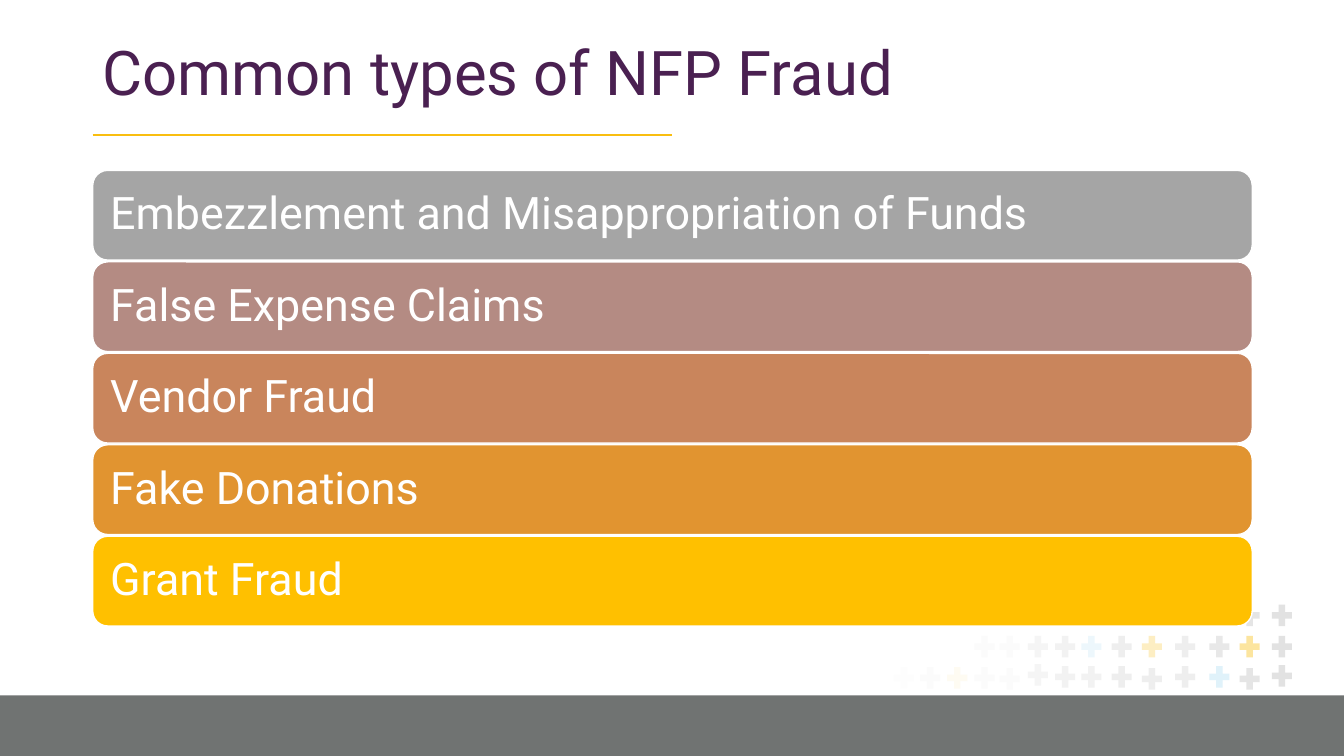
from dataclasses import dataclass

import pptx
import pptx.dml.color
import pptx.enum.shapes
import pptx.enum.text
import pptx.oxml.ns
import pptx.util
from lxml import etree

Inches = pptx.util.Inches
Pt = pptx.util.Pt
Shape = pptx.enum.shapes.MSO_SHAPE

FONT = "Roboto"
COLOURS = {
    "white": "FFFFFF", "purple": "4A2051", "gold": "F9BE10", "footer": "707372",
    "plus_grey": "BFBFBF", "plus_blue": "A7DAF1",
    "grey": "A5A5A5", "rose": "B48B83", "copper": "C9855C",
    "orange": "E19430", "amber": "FFC000",
}


@dataclass
class Bar:
    text: str
    colour: str


@dataclass
class PlusColumn:
    left: float
    opacity: int
    bottom_top: float


@dataclass
class PlusRow:
    first_column: int
    accents: dict[int, str]
    top: float | None = None


BARS = [
    Bar("Embezzlement and Misappropriation of Funds", "grey"),
    Bar("False Expense Claims", "rose"),
    Bar("Vendor Fraud", "copper"),
    Bar("Fake Donations", "orange"),
    Bar("Grant Fraud", "amber"),
]
BAR_TOP, BAR_PITCH = 1.69, (5.32 - 1.69) / (len(BARS) - 1)

PLUS_COLUMNS = [
    PlusColumn(8.83, 2, 6.58), PlusColumn(9.09, 5, 6.58),
    PlusColumn(9.36, 5, 6.58), PlusColumn(9.63, 5, 6.58),
    PlusColumn(9.88, 5, 6.59), PlusColumn(10.16, 15, 6.55),
    PlusColumn(10.43, 20, 6.57), PlusColumn(10.69, 20, 6.57),
    PlusColumn(10.99, 25, 6.57), PlusColumn(11.29, 25, 6.59),
    PlusColumn(11.62, 25, 6.57), PlusColumn(11.96, 35, 6.57),
    PlusColumn(12.26, 40, 6.59), PlusColumn(12.58, 45, 6.56),
]
# A row without a top follows the uneven bottom edge of its columns
PLUS_ROWS = [
    PlusRow(12, {}, 5.96),
    PlusRow(3, {7: "plus_blue", 9: "gold", 12: "gold"}, 6.27),
    PlusRow(0, {2: "gold", 11: "plus_blue"}),
]


def rgb(name: str) -> pptx.dml.color.RGBColor:
    return pptx.dml.color.RGBColor.from_string(COLOURS[name])


def add_box(page, kind, left: float, top: float, width: float, height: float,
            colour: str, outline: str | None = None, opacity: int = 100):
    box = page.shapes.add_shape(kind, Inches(left), Inches(top), Inches(width), Inches(height))
    box.shadow.inherit = False
    box.fill.solid()
    box.fill.fore_color.rgb = rgb(colour)
    if outline:
        box.line.color.rgb = rgb(outline)
        box.line.width = Pt(1)
    else:
        box.line.fill.background()
    if opacity < 100:
        fill_colour = box.fill._xPr.find(".//" + pptx.oxml.ns.qn("a:srgbClr"))
        etree.SubElement(fill_colour, pptx.oxml.ns.qn("a:alpha"), val=str(opacity * 1000))
    return box


def write(box, text: str, *, size: float, colour: str, side: float, edge: float) -> None:
    frame = box.text_frame
    frame.word_wrap = True
    frame.vertical_anchor = pptx.enum.text.MSO_ANCHOR.MIDDLE
    frame.margin_left = frame.margin_right = Inches(side)
    frame.margin_top = frame.margin_bottom = Inches(edge)
    para = frame.paragraphs[0]
    para.alignment = pptx.enum.text.PP_ALIGN.LEFT
    para.line_spacing = 0.9
    span = para.add_run()
    span.text = text
    span.font.name = FONT
    span.font.size = Pt(size)
    span.font.color.rgb = rgb(colour)


def add_rule(page, left: float, right: float, top: float, colour: str) -> None:
    rule = page.shapes.add_connector(pptx.enum.shapes.MSO_CONNECTOR.STRAIGHT,
                                     Inches(left), Inches(top), Inches(right), Inches(top))
    rule.line.color.rgb = rgb(colour)
    rule.line.width = Pt(1)
    etree.SubElement(rule._element.spPr, pptx.oxml.ns.qn("a:effectLst"))


def add_plus_pattern(page) -> None:
    for row in PLUS_ROWS:
        for index, column in enumerate(PLUS_COLUMNS[row.first_column:], row.first_column):
            top = column.bottom_top if row.top is None else row.top
            add_box(page, Shape.MATH_PLUS, column.left, top, 0.27, 0.29,
                    row.accents.get(index, "plus_grey"), opacity=column.opacity)


def main() -> None:
    deck = pptx.Presentation()
    deck.slide_width, deck.slide_height = Inches(13.33), Inches(7.5)
    page = deck.slides.add_slide(deck.slide_layouts[6])

    # Footer band, rule and plus pattern
    add_box(page, Shape.RECTANGLE, 0, 6.9, 13.33, 0.6, "footer")
    add_rule(page, 0.92, 6.67, 1.34, "gold")
    add_plus_pattern(page)

    # Title
    title = page.shapes.add_textbox(Inches(0.92), Inches(0.32), Inches(11.5), Inches(0.85))
    write(title, "Common types of NFP Fraud", size=44, colour="purple", side=0.1, edge=0.05)

    # Fraud types
    for index, bar in enumerate(BARS):
        box = add_box(page, Shape.ROUNDED_RECTANGLE, 0.92, BAR_TOP + index * BAR_PITCH,
                      11.5, 0.89, bar.colour, outline="white")
        write(box, bar.text, size=32, colour="white", side=0.13, edge=0.13)

    deck.save("out.pptx")


if __name__ == "__main__":
    main()
